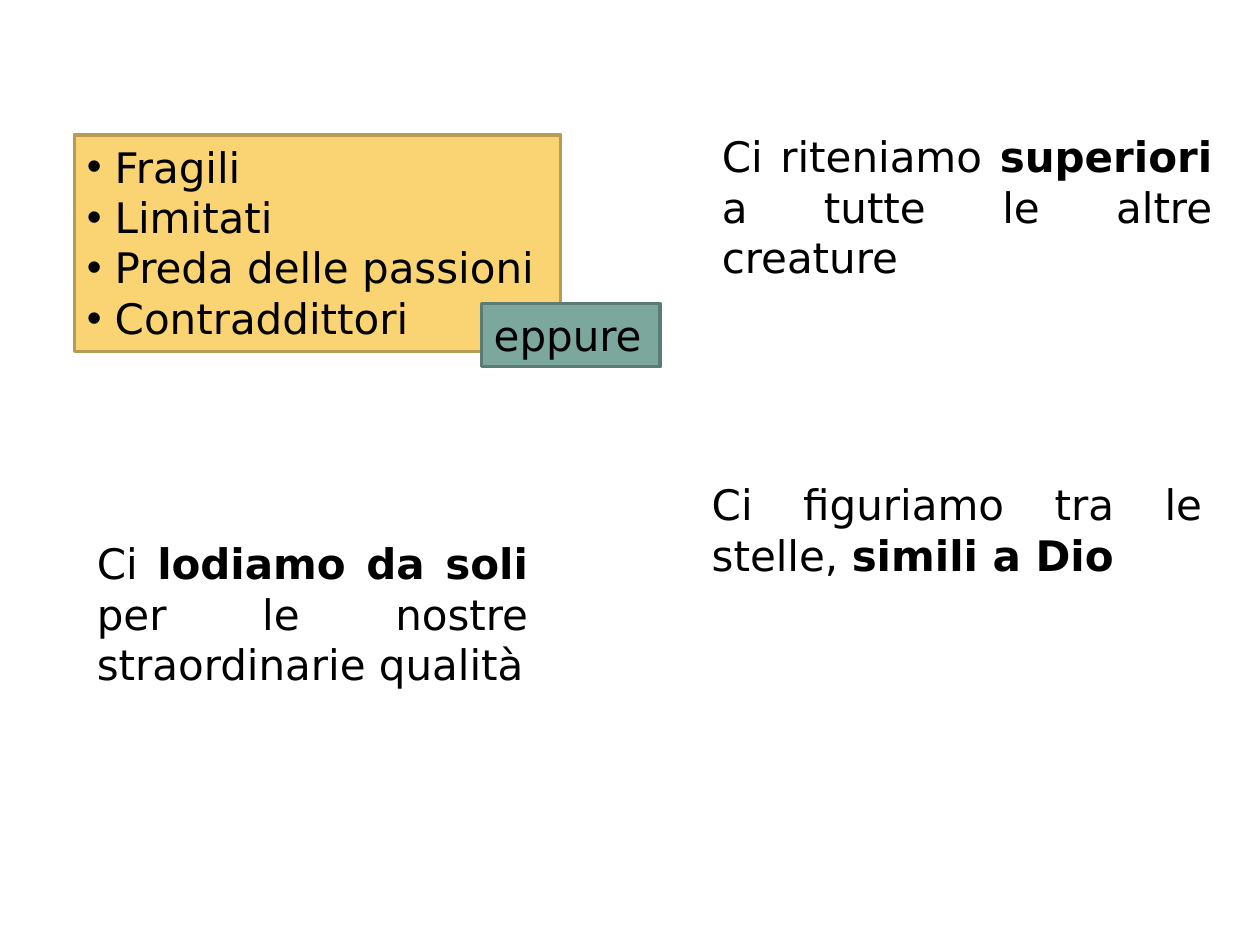
import dataclasses
import typing

import pptx
import pptx.dml.color
import pptx.enum.shapes
import pptx.enum.text
import pptx.oxml.ns
import pptx.util
from lxml import etree

WIDTH, HEIGHT = pptx.util.Inches(10), pptx.util.Inches(7.5)
FONT, SIZE = "DejaVu Sans", pptx.util.Pt(24)
INDENT = pptx.util.Inches(0.22)


class Area(typing.NamedTuple):
    """Left, top, width and height as percentages of the slide."""
    left: float
    top: float
    width: float
    height: float


class Piece(typing.NamedTuple):
    text: str
    bold: bool = False


@dataclasses.dataclass
class Note:
    area: Area
    pieces: list[Piece]


TRAITS = ["Fragili", "Limitati", "Preda delle passioni", "Contraddittori"]
NOTES = [
    Note(Area(56.3, 13.2, 40.9, 17.47),
         [Piece("Ci riteniamo "), Piece("superiori", True),
          Piece(" a tutte le altre creature")]),
    Note(Area(6.7, 56.27, 36.2, 17.47),
         [Piece("Ci "), Piece("lodiamo da soli ", True),
          Piece("per le nostre straordinarie qualità")]),
    Note(Area(55.5, 50, 40.9, 12.13),
         [Piece("Ci figuriamo tra le stelle, "),
          Piece("simili a Dio", True)]),
]


def color(code: str) -> pptx.dml.color.RGBColor:
    return pptx.dml.color.RGBColor.from_string(code)


def place(area: Area) -> tuple[int, int, int, int]:
    sides = (WIDTH, HEIGHT, WIDTH, HEIGHT)
    return tuple(round(side * part / 100) for side, part in zip(sides, area))


def paint(shape, fill: str, edge: str) -> None:
    shape.fill.solid()
    shape.fill.fore_color.rgb = color(fill)
    shape.line.color.rgb = color(edge)
    shape.line.width = pptx.util.Pt(2)


def style(frame) -> None:
    """Apply the common text format, leaving bold as it is."""
    frame.word_wrap = True
    frame.auto_size = pptx.enum.text.MSO_AUTO_SIZE.NONE
    frame.vertical_anchor = pptx.enum.text.MSO_ANCHOR.TOP
    for para in frame.paragraphs:
        para.alignment = pptx.enum.text.PP_ALIGN.JUSTIFY
        para.space_before = pptx.util.Pt(0)
        for run in para.runs:
            run.font.name = FONT
            run.font.size = SIZE
            run.font.color.rgb = color("000000")


def bullet(para) -> None:
    props = para._p.get_or_add_pPr()
    props.set("marL", str(INDENT))
    props.set("indent", str(-INDENT))
    mark = etree.SubElement(props, pptx.oxml.ns.qn("a:buChar"))
    mark.set("char", "•")


def add_list(slide, area: Area, items: list[str]) -> None:
    body = slide.placeholders[1]
    body.left, body.top, body.width, body.height = place(area)
    paint(body, "FAD372", "B99C54")
    body.text_frame.text = "\n".join(items)
    style(body.text_frame)
    for para in body.text_frame.paragraphs:
        bullet(para)


def add_label(slide, area: Area, text: str) -> None:
    kind = pptx.enum.shapes.MSO_SHAPE.RECTANGLE
    label = slide.shapes.add_shape(kind, *place(area))
    label.shadow.inherit = False
    paint(label, "7BA79D", "5B7C74")
    label.text_frame.text = text
    style(label.text_frame)


def add_note(slide, note: Note) -> None:
    frame = slide.shapes.add_textbox(*place(note.area)).text_frame
    for piece in note.pieces:
        run = frame.paragraphs[0].add_run()
        run.text = piece.text
        run.font.bold = piece.bold
    style(frame)


def main() -> None:
    deck = pptx.Presentation()
    deck.slide_width, deck.slide_height = WIDTH, HEIGHT
    slide = deck.slides.add_slide(deck.slide_layouts[1])
    title = slide.shapes.title.element
    title.getparent().remove(title)
    add_list(slide, Area(5.9, 14.27, 38.6, 22.93), TRAITS)
    add_label(slide, Area(38.2, 32.13, 14.2, 6.67), "eppure")
    for note in NOTES:
        add_note(slide, note)
    deck.save("out.pptx")


if __name__ == "__main__":
    main()
